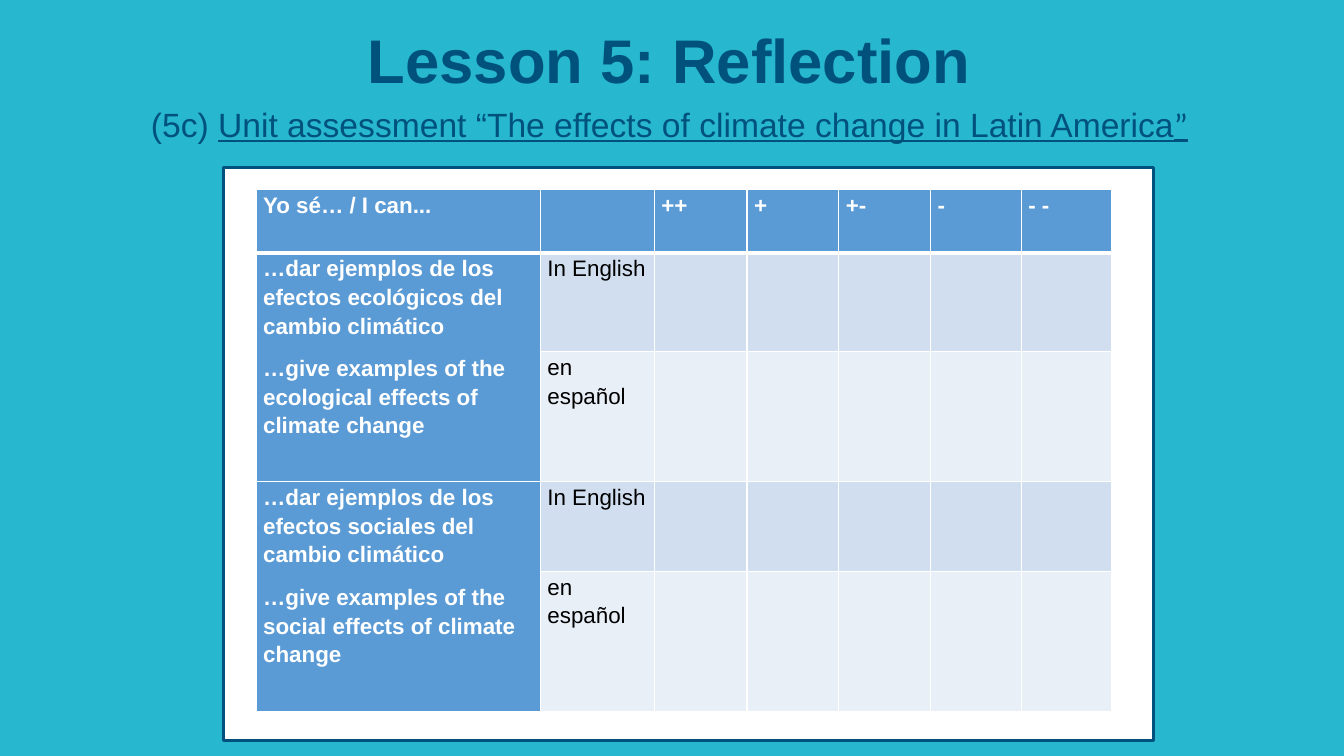
from lxml.etree import SubElement
from pptx import Presentation
from pptx.dml.color import RGBColor
from pptx.enum.shapes import MSO_SHAPE
from pptx.enum.text import MSO_ANCHOR, PP_ALIGN
from pptx.oxml.ns import qn
from pptx.util import Inches, Pt

# Content
TITLE = "Lesson 5: Reflection"
SUBTITLE = [
    ("(5c) ", {}),
    ("Unit assessment “The effects of climate change in Latin America", {"underline": True}),
    ("”", {"underline": True, "font": "Calibri"}),
]
HEADINGS = ["Yo sé… / I can...", "", "++", "+", "+-", "-", "- -"]
SKILLS = [
    ["…dar ejemplos de los efectos ecológicos del cambio climático",
     "…give examples of the ecological effects of climate change"],
    ["…dar ejemplos de los efectos sociales del cambio climático",
     "…give examples of the social effects of climate change"],
]
LANGUAGES = [("In English", "light"), ("en español", "pale")]

COLORS = {
    "sea": "27B8CF", "navy": "00527D", "white": "FFFFFF", "black": "000000",
    "blue": "5B9BD5", "light": "D0DEEF", "pale": "E9EFF7",
}

# Layout in inches
SLIDE_W, SLIDE_H = 13.33, 7.5
BANNER_LEFT, BANNER_W = -0.06, 13.4
COLUMNS = [2.82, 1.13, 0.92, 0.91, 0.91, 0.9, 0.9]
ROWS = [0.63, 0.98, 1.29, 0.89, 1.39]


def color(name):
    return RGBColor.from_string(COLORS[name])


def write(frame, paragraphs, size=16, ink="navy", bold=False, align=PP_ALIGN.LEFT,
          spacing=1.0, gap=0):
    """Fill a text frame; each paragraph is a string or a list of (text, format) runs."""
    frame.word_wrap = True
    for index, content in enumerate(paragraphs):
        paragraph = frame.paragraphs[0] if index == 0 else frame.add_paragraph()
        paragraph.alignment = align
        paragraph.line_spacing = spacing
        if index:
            paragraph.space_before = Pt(gap)
        runs = [(content, {})] if isinstance(content, str) else content
        for text, style in runs:
            run = paragraph.add_run()
            run.text = text
            run.font.size = Pt(size)
            run.font.bold = bold
            run.font.name = style.get("font", "Arial")
            run.font.underline = style.get("underline", False)
            run.font.color.rgb = color(ink)


def add_banner(slide, top, height, paragraphs, **style):
    box = slide.shapes.add_textbox(
        Inches(BANNER_LEFT), Inches(top), Inches(BANNER_W), Inches(height))
    box.text_frame.vertical_anchor = MSO_ANCHOR.MIDDLE
    write(box.text_frame, paragraphs, align=PP_ALIGN.CENTER, **style)


def style_cell(cell, fill, bottom=1):
    """Set white borders, margins and fill."""
    properties = cell._tc.get_or_add_tcPr()
    for side, width in (("L", 1), ("R", 1), ("T", 1), ("B", bottom)):
        border = SubElement(properties, qn(f"a:ln{side}"), w=str(Pt(width)))
        SubElement(SubElement(border, qn("a:solidFill")), qn("a:srgbClr"), val=COLORS["white"])
    cell.margin_left = cell.margin_right = Inches(0.07)
    cell.margin_top = cell.margin_bottom = 0
    cell.fill.solid()
    cell.fill.fore_color.rgb = color(fill)


def add_rubric(slide):
    rubric = slide.shapes.add_table(
        len(ROWS), len(COLUMNS), Inches(2.54), Inches(1.88),
        Inches(sum(COLUMNS)), Inches(sum(ROWS))).table
    for column, width in zip(rubric.columns, COLUMNS):
        column.width = Inches(width)
    for row, height in zip(rubric.rows, ROWS):
        row.height = Inches(height)

    # Heading row
    for col, heading in enumerate(HEADINGS):
        cell = rubric.cell(0, col)
        style_cell(cell, "blue", bottom=3)
        if heading:
            write(cell.text_frame, [heading], ink="white", bold=True, spacing=1.15)

    # One merged skill cell beside a row for each language
    for number, skill in enumerate(SKILLS):
        first = 1 + number * len(LANGUAGES)
        for row, (language, band) in enumerate(LANGUAGES, first):
            for col in range(len(COLUMNS)):
                style_cell(rubric.cell(row, col), band if col else "blue")
            write(rubric.cell(row, 1).text_frame, [language], ink="black", spacing=1.15)
        skill_cell = rubric.cell(first, 0)
        skill_cell.merge(rubric.cell(first + len(LANGUAGES) - 1, 0))
        write(skill_cell.text_frame, skill, ink="white", bold=True, spacing=1.15, gap=10)


def main():
    deck = Presentation()
    deck.slide_width, deck.slide_height = Inches(SLIDE_W), Inches(SLIDE_H)
    slide = deck.slides.add_slide(deck.slide_layouts[6])
    slide.background.fill.solid()
    slide.background.fill.fore_color.rgb = color("sea")

    # White panel behind the rubric
    panel = slide.shapes.add_shape(
        MSO_SHAPE.RECTANGLE, Inches(2.22), Inches(1.66), Inches(9.22), Inches(5.69))
    panel.shadow.inherit = False
    panel.fill.solid()
    panel.fill.fore_color.rgb = color("white")
    panel.line.color.rgb = color("navy")
    panel.line.width = Pt(2.25)

    add_banner(slide, -0.09, 1.45, [TITLE], size=44, bold=True, spacing=0.9)
    add_rubric(slide)
    add_banner(slide, 0.98, 0.5, [SUBTITLE], size=24)
    deck.save("out.pptx")


if __name__ == "__main__":
    main()
